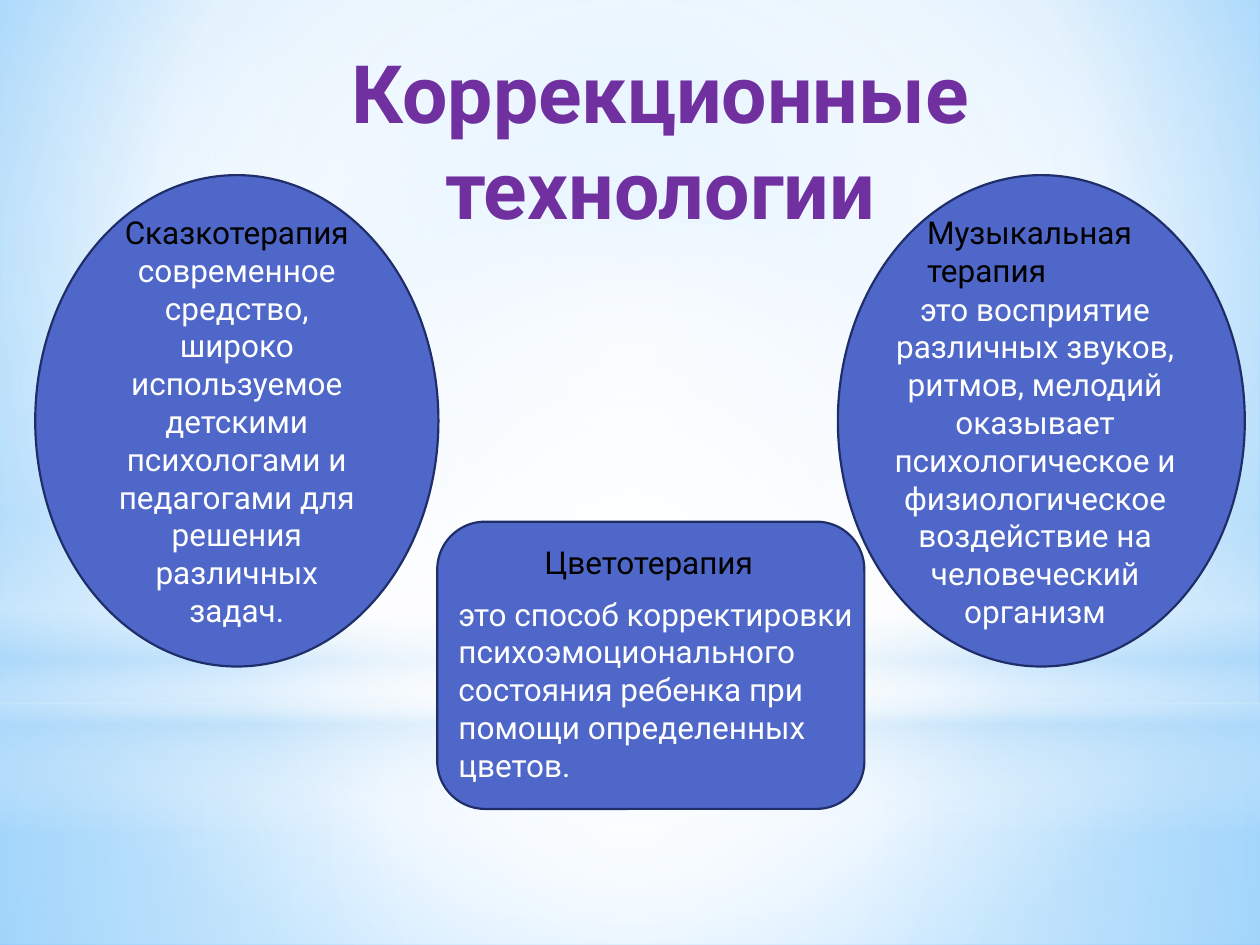
"""Build a slide on three correctional therapies."""
import dataclasses

import lxml.etree
import pptx
import pptx.dml.color
import pptx.enum.shapes
import pptx.enum.text
import pptx.oxml.ns
import pptx.util

Inches = pptx.util.Inches
Kind = pptx.enum.shapes.MSO_SHAPE
Align = pptx.enum.text.PP_ALIGN
Anchor = pptx.enum.text.MSO_ANCHOR
qn = pptx.oxml.ns.qn


@dataclasses.dataclass(frozen=True)
class Theme:
    font: str = "Roboto"
    head: str = "7030A0"
    fill: str = "4E67C8"
    edge: str = "1F2E69"
    dark: str = "000000"
    light: str = "FFFFFF"
    pale: str = "B4DCFA"
    sky: str = "9ED5FF"
    deep: str = "5BB9FF"
    title: float = 46
    body: float = 18
    line: float = 1.25


class Page:
    def __init__(self, deck, theme):
        self.theme = theme
        self.slide = deck.slides.add_slide(deck.slide_layouts[6])

    def color(self, name):
        return pptx.dml.color.RGBColor.from_string(getattr(self.theme, name))

    def shade(self, owner, root, stops, focus=None):
        owner.fill.gradient()
        grad = root.find(".//" + qn("a:gradFill"))
        for child in list(grad):
            grad.remove(child)
        items = lxml.etree.SubElement(grad, qn("a:gsLst"))
        for pos, name, alpha in stops:
            stop = lxml.etree.SubElement(items, qn("a:gs"), pos=str(pos * 1000))
            tint = lxml.etree.SubElement(stop, qn("a:srgbClr"), val=getattr(self.theme, name))
            if alpha < 100:
                lxml.etree.SubElement(tint, qn("a:alpha"), val=str(alpha * 1000))
        if focus:
            way = lxml.etree.SubElement(grad, qn("a:path"), {"path": "circle"})
            sides = {side: str(part * 1000) for side, part in zip("ltrb", focus)}
            lxml.etree.SubElement(way, qn("a:fillToRect"), sides)
        else:
            lxml.etree.SubElement(grad, qn("a:lin"), ang="5400000", scaled="0")

    def shape(self, kind, box):
        shape = self.slide.shapes.add_shape(kind, *map(Inches, box))
        shape.shadow.inherit = False
        return shape

    def back(self, stops, focus):
        self.shade(self.slide.background, self.slide.element, stops, focus)

    def glow(self, kind, box, stops, focus=None):
        shape = self.shape(kind, box)
        shape.line.fill.background()
        self.shade(shape, shape.element, stops, focus)

    def panel(self, kind, box):
        shape = self.shape(kind, box)
        shape.fill.solid()
        shape.fill.fore_color.rgb = self.color("fill")
        shape.line.color.rgb = self.color("edge")
        shape.line.width = pptx.util.Pt(self.theme.line)
        return shape

    def label(self, frame, lines, size="body", bold=False, align=Align.LEFT):
        frame.word_wrap = True
        frame.text = "\n".join(text for text, name in lines)
        for para, (text, name) in zip(frame.paragraphs, lines):
            para.alignment = align
            for run in para.runs:
                run.font.name = self.theme.font
                run.font.size = pptx.util.Pt(getattr(self.theme, size))
                run.font.bold = bold
                run.font.color.rgb = self.color(name)

    def text(self, box, text, name, indent=0.1, **style):
        frame = self.slide.shapes.add_textbox(*map(Inches, box)).text_frame
        frame.margin_left = Inches(indent)
        frame.vertical_anchor = Anchor.TOP
        self.label(frame, [(text, name)], **style)


def main():
    deck = pptx.Presentation()
    deck.slide_width, deck.slide_height = Inches(10), Inches(7.5)
    page = Page(deck, Theme())
    mid = (50, 50, 50, 50)

    page.back([(0, "sky", 100), (60, "light", 100), (100, "deep", 100)], (20, 10, 20, 60))
    page.glow(Kind.RECTANGLE, (0, 5.58, 10, 1.92),
              [(0, "light", 91), (37, "light", 76), (100, "pale", 79)], mid)
    page.glow(Kind.RECTANGLE, (0, 0, 10, 5.58),
              [(0, "light", 89), (48, "light", 62), (100, "pale", 79)], mid)
    page.glow(Kind.RECTANGLE, (0, 4.12, 10, 2.5),
              [(0, "light", 0), (29, "light", 30), (45, "pale", 40),
               (55, "light", 26), (65, "pale", 60), (100, "light", 0)])
    page.glow(Kind.OVAL, (0, 1.75, 10, 5.58), [(0, "light", 100), (56, "light", 0)], mid)

    page.text((1.68, 0.29, 7.12, 1.1), "Коррекционные технологии", "head",
              size="title", bold=True, align=Align.CENTER)

    tale = page.panel(Kind.OVAL, (0.28, 1.39, 3.2, 3.9))
    tale.text_frame.vertical_anchor = Anchor.MIDDLE
    page.label(tale.text_frame, [
        ("Сказкотерапия", "dark"),
        ("современное средство, широко используемое детскими психологами "
         "и педагогами для решения различных задач.", "light"),
    ], align=Align.CENTER)

    page.panel(Kind.ROUNDED_RECTANGLE, (3.47, 4.14, 3.39, 2.28))
    page.text((3.91, 4.26, 2.52, 0.4), "Цветотерапия", "dark", indent=0.41)
    page.text((3.54, 4.67, 3.39, 1.62),
              "это способ корректировки психоэмоционального состояния ребенка "
              "при помощи определенных цветов.", "light")

    page.panel(Kind.OVAL, (6.65, 1.39, 3.23, 3.9))
    page.text((7.26, 1.64, 2.64, 0.4), "Музыкальная терапия", "dark")
    page.text((6.94, 2.25, 2.55, 2.83),
              "это восприятие различных звуков, ритмов, мелодий оказывает "
              "психологическое и физиологическое воздействие на человеческий "
              "организм", "light", align=Align.CENTER)

    deck.save("out.pptx")


if __name__ == "__main__":
    main()
